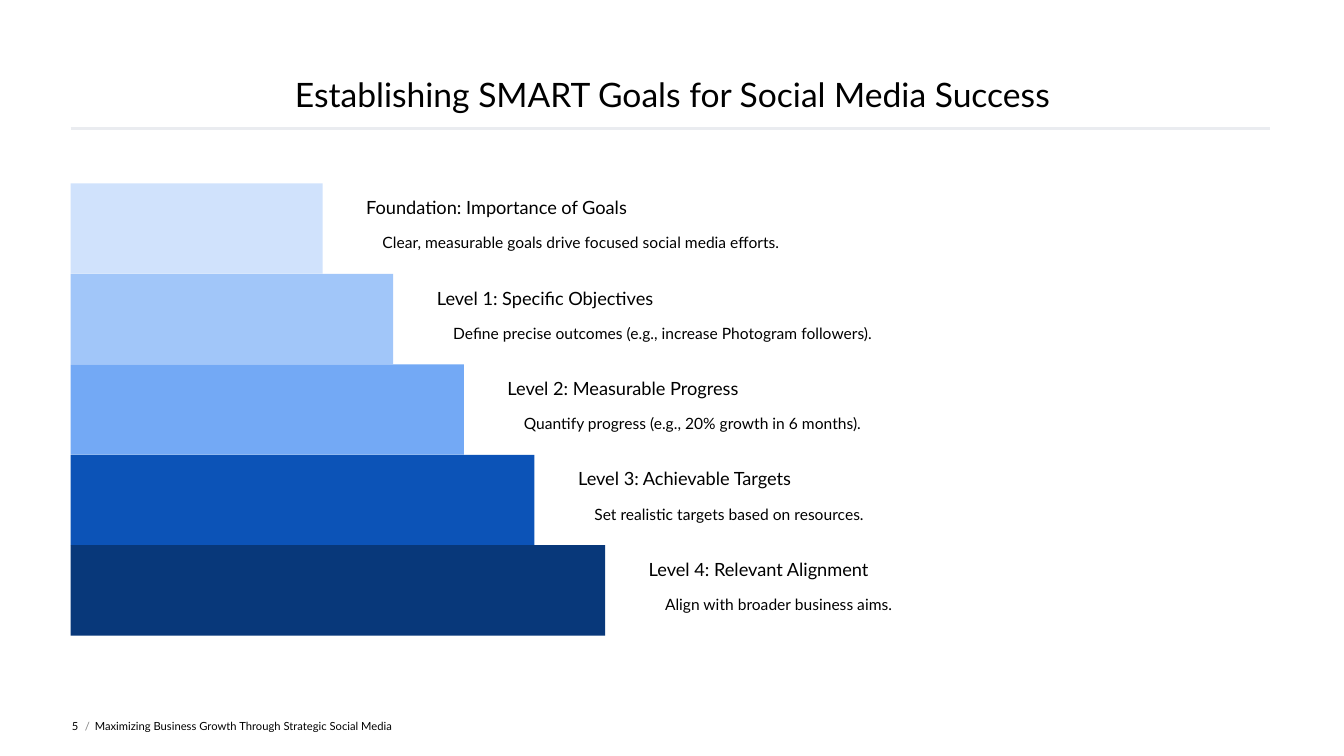
"""Build the slide on SMART goals: a staircase of five levels with captions."""
from lxml import etree
from pptx import Presentation
from pptx.dml.color import RGBColor
from pptx.enum.shapes import MSO_CONNECTOR, MSO_SHAPE
from pptx.enum.text import MSO_ANCHOR, MSO_AUTO_SIZE, PP_ALIGN
from pptx.oxml.ns import qn
from pptx.util import Cm, Pt

STRAIGHT = MSO_CONNECTOR.STRAIGHT
RECTANGLE = MSO_SHAPE.RECTANGLE
TOP, MIDDLE, BOTTOM = MSO_ANCHOR.TOP, MSO_ANCHOR.MIDDLE, MSO_ANCHOR.BOTTOM
LEFT, CENTER, RIGHT = PP_ALIGN.LEFT, PP_ALIGN.CENTER, PP_ALIGN.RIGHT
NO_AUTOFIT = MSO_AUTO_SIZE.NONE

FONT = "Lato"
COLORS = {
    "text": "000000",
    "slash": "808080",
    "rule": "EAECF0",
    "foundation": "D0E2FC",
    "level 1": "A1C6F9",
    "level 2": "73A9F5",
    "level 3": "0C53B7",
    "level 4": "08387A",
}
LEVELS = [
    ("foundation", "Foundation: Importance of Goals",
     "Clear, measurable goals drive focused social media efforts."),
    ("level 1", "Level 1: Specific Objectives",
     "Define precise outcomes (e.g., increase Photogram followers)."),
    ("level 2", "Level 2: Measurable Progress",
     "Quantify progress (e.g., 20% growth in 6 months)."),
    ("level 3", "Level 3: Achievable Targets",
     "Set realistic targets based on resources."),
    ("level 4", "Level 4: Relevant Alignment",
     "Align with broader business aims."),
]
FOOTER = [
    ("5", 1.19, 0.79, RIGHT, "text"),
    ("/", 2.14, 0.25, LEFT, "slash"),
    ("Maximizing Business Growth Through Strategic Social Media", 2.39, 21.87, LEFT, "text"),
]
MARGIN = 1.78
STAIR_TOP, STEP_HEIGHT = 4.62, 2.28
FIRST_WIDTH, WIDTH_GAIN = 6.35, 1.78
CAPTION_GAP, CAPTION_DROP = 1.1, 0.39


def set_frame(frame, anchor):
    """Give a text frame zero insets, wrapping and a vertical anchor."""
    frame.margin_left = frame.margin_right = frame.margin_top = frame.margin_bottom = 0
    frame.word_wrap = True
    frame.auto_size = NO_AUTOFIT
    frame.vertical_anchor = anchor


def set_text(paragraph, text, size, color="text", align=LEFT):
    """Write one paragraph and format its run."""
    paragraph.text = text
    paragraph.alignment = align
    font = paragraph.runs[0].font
    font.name = FONT
    font.size = Pt(size)
    font.color.rgb = RGBColor.from_string(COLORS[color])


prs = Presentation()
prs.slide_width, prs.slide_height = Cm(33.87), Cm(19.05)
slide = prs.slides.add_slide(prs.slide_layouts[5])
shapes = slide.shapes

title = shapes.title
title.left, title.top, title.width, title.height = Cm(MARGIN), Cm(0), Cm(30.33), Cm(2.87)
set_frame(title.text_frame, BOTTOM)
set_text(title.text_frame.paragraphs[0],
         "Establishing SMART Goals for Social Media Success", 24, align=CENTER)

rule = shapes.add_connector(STRAIGHT, Cm(MARGIN), Cm(3.24), Cm(32), Cm(3.24))
rule.line.color.rgb = RGBColor.from_string(COLORS["rule"])
rule.line.width = Pt(2)
etree.SubElement(rule.line._get_or_add_ln().getparent(), qn("a:effectLst"))

for index, (color, heading, detail) in enumerate(LEVELS):
    top = STAIR_TOP + index * STEP_HEIGHT
    width = FIRST_WIDTH + index * WIDTH_GAIN
    step = shapes.add_shape(RECTANGLE, Cm(MARGIN), Cm(top), Cm(width), Cm(STEP_HEIGHT))
    step.shadow.inherit = False
    step.fill.solid()
    step.fill.fore_color.rgb = RGBColor.from_string(COLORS[color])
    step.line.fill.background()

    caption = shapes.add_textbox(Cm(MARGIN + width + CAPTION_GAP), Cm(top + CAPTION_DROP),
                                 Cm(14.73), Cm(1.52)).text_frame
    set_frame(caption, TOP)
    heading_line, detail_line = caption.paragraphs[0], caption.add_paragraph()
    set_text(heading_line, heading, 13)
    set_text(detail_line, detail, 11.1)
    heading_line.line_spacing = detail_line.line_spacing = 0.9
    detail_line.space_before = Pt(12)
    detail_line._p.get_or_add_pPr().set("marL", str(Cm(0.41)))

for text, left, width, align, color in FOOTER:
    footer_part = shapes.add_textbox(Cm(left), Cm(17.53), Cm(width), Cm(1.52)).text_frame
    set_frame(footer_part, MIDDLE)
    set_text(footer_part.paragraphs[0], text, 8, color, align)

prs.save("out.pptx")
